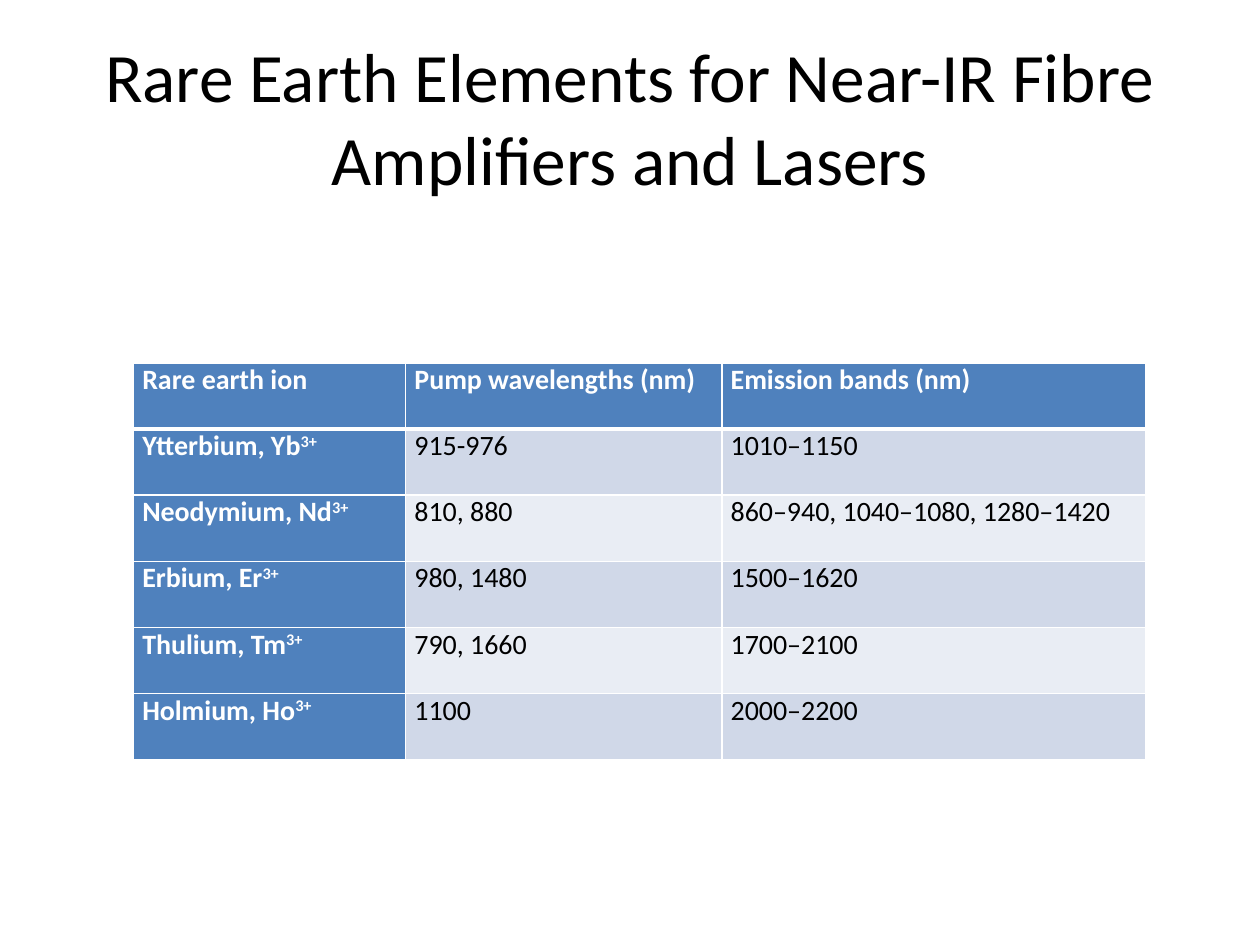
from dataclasses import dataclass

from lxml import etree
from pptx import Presentation
from pptx import util as u
from pptx.dml.color import RGBColor
from pptx.enum import text
from pptx.oxml import ns

WIDTH, HEIGHT = 10, 7.5
FONT = "Calibri"
COLOURS = {
    "black": "000000",
    "white": "FFFFFF",
    "head": "4F81BD",
    "band_dark": "D0D8E8",
    "band_light": "E9EDF4",
}


@dataclass(frozen=True)
class Ion:
    name: str
    pump: str
    emission: str
    charge: str = "3+"


HEADINGS = ("Rare earth ion", "Pump wavelengths (nm)", "Emission bands (nm)")
IONS = (
    Ion("Ytterbium, Yb", "915-976", "1010–1150"),
    Ion("Neodymium, Nd", "810, 880", "860–940, 1040–1080, 1280–1420"),
    Ion("Erbium, Er", "980, 1480", "1500–1620"),
    Ion("Thulium, Tm", "790, 1660", "1700–2100"),
    Ion("Holmium, Ho", "1100", "2000–2200"),
)
COLUMN_WIDTHS = (2.16, 2.51, 3.36)
TABLE_LEFT, TABLE_TOP, TABLE_HEIGHT = 1.06, 2.88, 3.15


def write(frame, words: str, *, size: float, colour: str, bold: bool = False,
          align=text.PP_ALIGN.JUSTIFY, after: float = 0, raised: str = "") -> None:
    """Fill the first paragraph, with an optional superscript at its end."""
    para = frame.paragraphs[0]
    para.alignment = align
    para.space_after = u.Pt(after)
    for part in filter(None, (words, raised)):
        span = para.add_run()
        span.text = part
        span.font.name = FONT
        span.font.size = u.Pt(size)
        span.font.bold = bold
        span.font.color.rgb = RGBColor.from_string(COLOURS[colour])
    if raised:
        span.font._element.set("baseline", "30000")


def draw_borders(cell, top: float = 1, bottom: float = 1) -> None:
    properties = cell._tc.get_or_add_tcPr()
    for side, points in (("L", 1), ("R", 1), ("T", top), ("B", bottom)):
        line = etree.SubElement(properties, ns.qn(f"a:ln{side}"), w=str(u.Pt(points)))
        fill = etree.SubElement(line, ns.qn("a:solidFill"))
        etree.SubElement(fill, ns.qn("a:srgbClr"), val=COLOURS["white"])


def draw_cell(cell, row: int, column: int, words: str, raised: str = "") -> None:
    is_head = row == 0 or column == 0
    band = "band_dark" if row % 2 else "band_light"
    # A thick rule separates the heading row from the ions
    draw_borders(cell, top=3 if row == 1 else 1, bottom=3 if row == 0 else 1)
    cell.fill.solid()
    cell.fill.fore_color.rgb = RGBColor.from_string(COLOURS["head" if is_head else band])
    cell.margin_left = cell.margin_right = u.Inches(0.07)
    cell.margin_top = cell.margin_bottom = 0
    write(cell.text_frame, words, size=16, colour="white" if is_head else "black",
          bold=is_head, after=9, raised=raised)


def draw_title(page, words: str) -> None:
    box = page.shapes.add_textbox(u.Inches(WIDTH * 0.05), u.Inches(HEIGHT * 0.04),
                                  u.Inches(WIDTH * 0.9), u.Inches(HEIGHT / 6))
    box.text_frame.word_wrap = True
    box.text_frame.vertical_anchor = text.MSO_ANCHOR.MIDDLE
    write(box.text_frame, words, size=39.6, colour="black", align=text.PP_ALIGN.CENTER)


def draw_ion_table(page) -> None:
    row_count = len(IONS) + 1
    table = page.shapes.add_table(
        row_count, len(HEADINGS), u.Inches(TABLE_LEFT), u.Inches(TABLE_TOP),
        u.Inches(sum(COLUMN_WIDTHS)), u.Inches(TABLE_HEIGHT)).table
    for column, width in zip(table.columns, COLUMN_WIDTHS):
        column.width = u.Inches(width)
    for row in table.rows:
        row.height = u.Inches(TABLE_HEIGHT / row_count)

    # Heading row
    for column, heading in enumerate(HEADINGS):
        draw_cell(table.cell(0, column), 0, column, heading)
    # One row per ion
    for row, ion in enumerate(IONS, start=1):
        for column, words in enumerate((ion.name, ion.pump, ion.emission)):
            draw_cell(table.cell(row, column), row, column, words,
                      raised="" if column else ion.charge)


def main() -> None:
    deck = Presentation()
    deck.slide_width, deck.slide_height = u.Inches(WIDTH), u.Inches(HEIGHT)
    page = deck.slides.add_slide(deck.slide_layouts[6])
    draw_title(page, "Rare Earth Elements for Near-IR Fibre Amplifiers and Lasers")
    draw_ion_table(page)
    deck.save("out.pptx")


if __name__ == "__main__":
    main()
